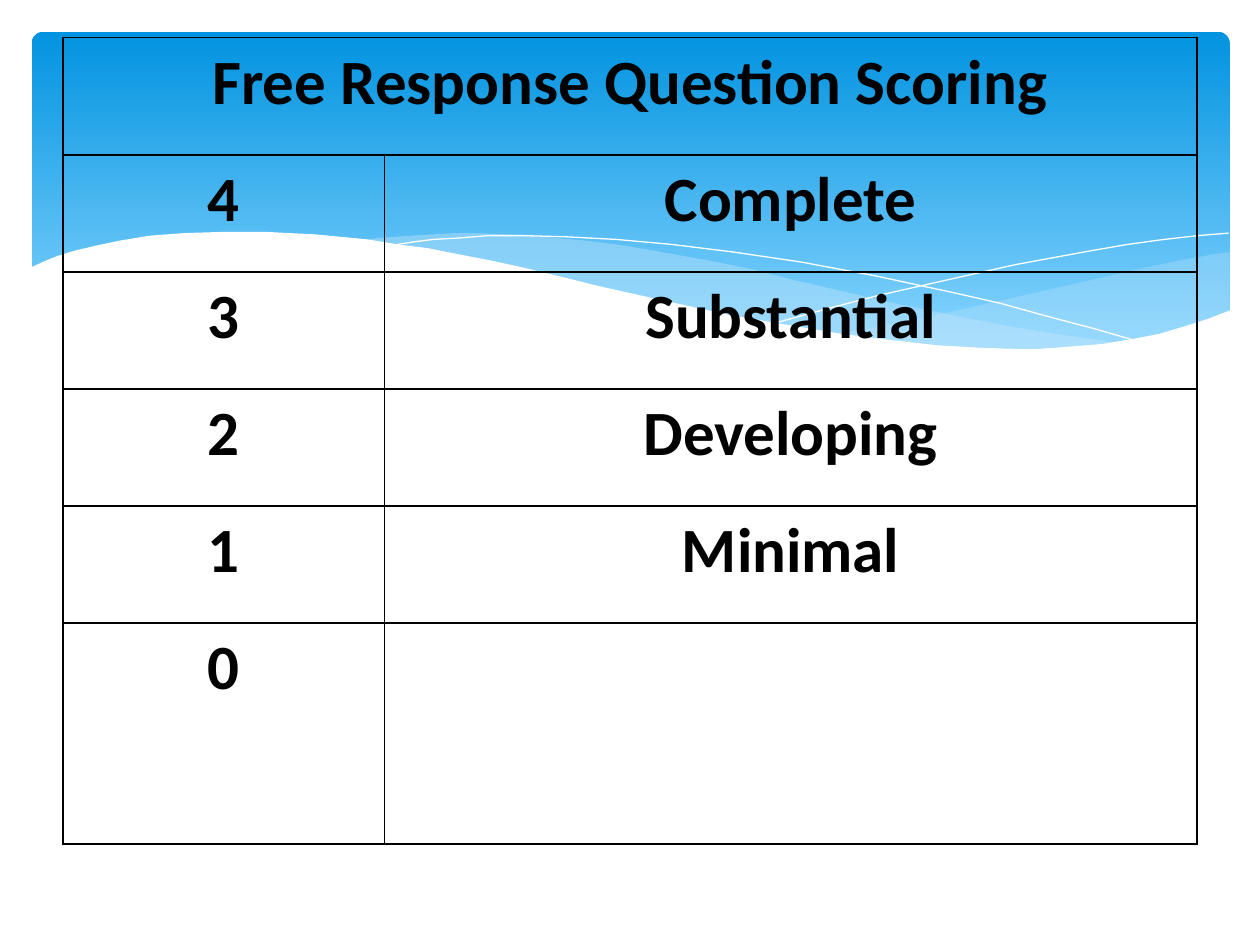
from lxml import etree
from pptx import Presentation
from pptx.dml.color import RGBColor
from pptx.enum.shapes import MSO_SHAPE
from pptx.enum.text import PP_ALIGN
from pptx.oxml.ns import qn
from pptx.util import Cm, Pt

ROUNDED = MSO_SHAPE.ROUNDED_RECTANGLE
CENTER = PP_ALIGN.CENTER
FONT = "Calibri"
COLORS = {
    "band_top": "0293E0",
    "band_bottom": "83D3FE",
    "wave": "C6E7FC",
    "white": "FFFFFF",
    "black": "000000",
}
WAVE_UNIT = Cm(0.0254)  # wave points are hundredths of an inch

# Outlines of the waves, from back to front
RIGHT_WAVE = [
    (976, 200), (962, 202), (935, 207), (906, 213), (876, 220), (832, 230),
    (779, 242), (729, 253), (683, 262), (661, 265), (691, 269), (719, 272),
    (745, 275), (781, 277), (814, 278), (844, 277), (872, 274), (897, 270),
    (921, 265), (942, 259), (963, 252), (976, 247),
]
MIDDLE_WAVE = [
    (893, 273), (866, 269), (837, 265), (807, 260), (775, 254), (741, 247),
    (706, 240), (668, 231), (629, 222), (598, 214), (569, 208), (541, 203),
    (514, 198), (489, 194), (465, 191), (442, 189), (420, 187), (399, 186),
    (380, 185), (361, 185), (328, 187), (299, 189), (286, 191), (323, 196),
    (362, 203), (404, 211), (449, 222), (491, 232), (530, 240), (566, 248),
    (601, 255), (634, 261), (665, 266), (695, 270), (722, 274), (748, 276),
    (773, 277), (796, 278), (828, 278), (857, 277), (876, 275),
]
FALLING_LINE = [
    (309, 195), (328, 192), (344, 190), (363, 189), (387, 187), (416, 187),
    (450, 188), (489, 190), (533, 194), (582, 200), (636, 208), (695, 219),
    (760, 233), (795, 241), (831, 251), (869, 261), (907, 272),
]
RISING_LINE = [
    (613, 257), (653, 246), (695, 235), (748, 223), (806, 210), (866, 199),
    (895, 194), (924, 190), (951, 187), (975, 185),
]
FRONT_WAVE = [
    (977, 246), (959, 253), (940, 259), (920, 265), (899, 269), (875, 273),
    (850, 275), (823, 277), (809, 277), (778, 276), (744, 274), (708, 270),
    (668, 265), (626, 258), (579, 250), (529, 239), (475, 227), (447, 220),
    (418, 213), (391, 207), (365, 202), (340, 197), (316, 194), (292, 190),
    (271, 188), (250, 186), (230, 185), (211, 184), (177, 184), (146, 185),
    (119, 187), (95, 191), (76, 195), (59, 199), (46, 203), (36, 207),
    (23, 213), (23, 329), (977, 329),
]

SCORES = [("4", "Complete"), ("3", "Substantial"), ("2", "Developing"),
          ("1", "Minimal"), ("0", "")]


def color(name):
    return RGBColor.from_string(COLORS[name])


def draw_outline(slide, left, top, points, closed):
    builder = slide.shapes.build_freeform(*points[0], scale=WAVE_UNIT)
    builder.add_line_segments(points[1:], close=closed)
    shape = builder.convert_to_shape(left, top)
    shape.shadow.inherit = False
    return shape


def draw_wave(slide, left, top, points, color_name, opacity=100):
    shape = draw_outline(slide, left, top, points, True)
    shape.fill.solid()
    shape.fill.fore_color.rgb = color(color_name)
    shape.line.fill.background()
    if opacity < 100:
        fill_color = shape.fill._xPr.find(f"{qn('a:solidFill')}/{qn('a:srgbClr')}")
        etree.SubElement(fill_color, qn("a:alpha"), val=str(opacity * 1000))


def draw_header(slide, left, top):
    # Gradient band
    band = slide.shapes.add_shape(
        ROUNDED, left + Cm(0.64), top + Cm(0.64), Cm(24.15), Cm(6.86))
    band.adjustments[0] = 0.034
    band.shadow.inherit = False
    band.line.fill.background()
    band.fill.gradient()
    band.fill.gradient_angle = 270
    stops = band.fill.gradient_stops
    for stop, position, name in zip(stops, (0, 0.9), ("band_top", "band_bottom")):
        stop.position = position
        stop.color.rgb = color(name)

    # Waves and hairlines across its lower edge
    draw_wave(slide, left, top, RIGHT_WAVE, "wave", 29)
    draw_wave(slide, left, top, MIDDLE_WAVE, "wave", 40)
    for points in (FALLING_LINE, RISING_LINE):
        hairline = draw_outline(slide, left, top, points, False)
        hairline.fill.background()
        hairline.line.color.rgb = color("white")
        hairline.line.width = Pt(0)
    draw_wave(slide, left, top, FRONT_WAVE, "white")


def format_cell(cell):
    # Borders go before the fill in the cell properties
    properties = cell._tc.get_or_add_tcPr()
    for side in ("lnL", "lnR", "lnT", "lnB"):
        border = etree.SubElement(properties, qn(f"a:{side}"), w=str(Pt(1)))
        fill = etree.SubElement(border, qn("a:solidFill"))
        etree.SubElement(fill, qn("a:srgbClr"), val=COLORS["black"])
    cell.fill.background()


def write_cell(cell, text):
    cell.text_frame.text = text
    paragraph = cell.text_frame.paragraphs[0]
    paragraph.alignment = CENTER
    paragraph_properties = paragraph._p.get_or_add_pPr()
    paragraph_properties.set("marL", str(Cm(0.97)))
    paragraph_properties.set("indent", str(-Cm(0.97)))
    font = paragraph.font
    for run in paragraph.runs:
        font = run.font
        font.name = FONT
        font.size = Pt(36)
        font.bold = True
        font.color.rgb = color("black")


def draw_score_table(slide, left, top, width, height):
    row_count = len(SCORES) + 1
    table = slide.shapes.add_table(
        row_count, 2, left, top, width, height).table
    score_width, row_height = Cm(6.48), Cm(2.36)
    table.columns[0].width = score_width
    table.columns[1].width = width - score_width
    for row in table.rows:
        row.height = row_height
    table.rows[row_count - 1].height = height - row_height * (row_count - 1)

    for cell in table.iter_cells():
        format_cell(cell)

    # Heading across both columns
    heading = table.cell(0, 0)
    heading.merge(table.cell(0, 1))
    write_cell(heading, "Free Response Question Scoring")

    # One row for each score
    for row_index, labels in enumerate(SCORES, start=1):
        for column_index, label in enumerate(labels):
            if label:
                write_cell(table.cell(row_index, column_index), label)


def main():
    presentation = Presentation()
    presentation.slide_width = Cm(25.4)
    presentation.slide_height = Cm(19.05)
    slide = presentation.slides.add_slide(presentation.slide_layouts[6])
    draw_header(slide, Cm(0), Cm(0))
    draw_score_table(slide, Cm(1.27), Cm(0.76), Cm(22.86), Cm(16.25))
    presentation.save("out.pptx")


if __name__ == "__main__":
    main()
